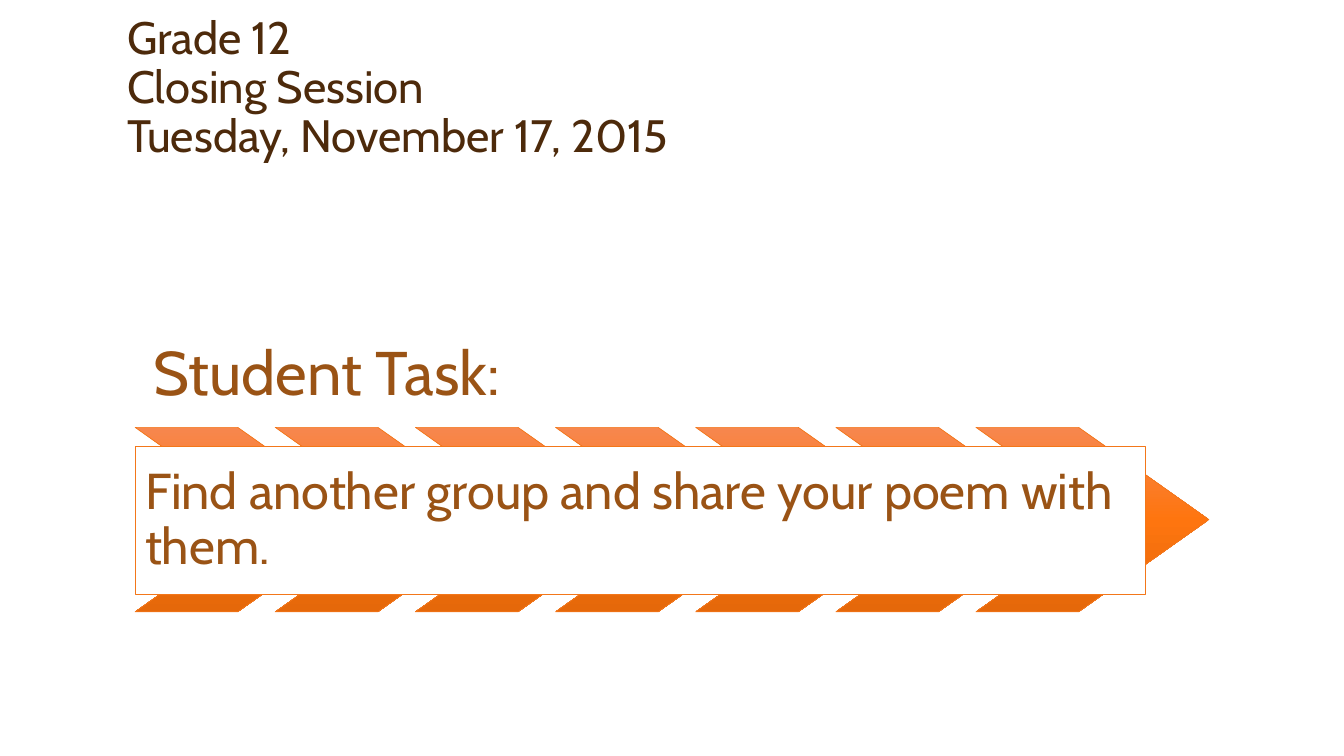
from copy import deepcopy

from pptx import Presentation
from pptx.dml.color import RGBColor
from pptx.enum.shapes import MSO_SHAPE
from pptx.enum.text import MSO_ANCHOR, MSO_AUTO_SIZE, PP_ALIGN
from pptx.util import Inches, Pt

CHEVRON, RECT = MSO_SHAPE.CHEVRON, MSO_SHAPE.RECTANGLE
BOTTOM, MIDDLE = MSO_ANCHOR.BOTTOM, MSO_ANCHOR.MIDDLE
LEFT, NO_FIT = PP_ALIGN.LEFT, MSO_AUTO_SIZE.NONE

FONT = "Cabin"
DARK, BROWN, ORANGE, WHITE = "4D2A0B", "9A5315", "F3771A", "FFFFFF"
SHADES = ["F7874E", "FE750F", "E5680A"]


def paint(target, color):
    target.rgb = RGBColor.from_string(color)


def write(shape, text, size, color, anchor, inset):
    frame = shape.text_frame
    frame.text = text
    frame.word_wrap = True
    frame.auto_size = NO_FIT
    frame.vertical_anchor = anchor
    frame.margin_left = frame.margin_right = Inches(inset[0])
    frame.margin_top = frame.margin_bottom = Inches(inset[1])
    para = frame.paragraphs[0]
    para.alignment = LEFT
    para.line_spacing = 0.9
    para.font.name = FONT
    para.font.size = Pt(size)
    paint(para.font.color, color)


def outline(shape):
    shape.shadow.inherit = False
    paint(shape.line.color, ORANGE)
    shape.line.width = Pt(0.5)


def shade(fill):
    fill.gradient()
    fill.gradient_angle = 270
    # Add a middle stop to the two default ones
    first = fill.gradient_stops[0]._gs
    first.addnext(deepcopy(first))
    for i, (stop, color) in enumerate(zip(fill.gradient_stops, SHADES)):
        stop.position = i / 2
        paint(stop.color, color)


def add_title(slide, x, y, w, h):
    title = slide.shapes.title
    title.left, title.top = Inches(x), Inches(y)
    title.width, title.height = Inches(w), Inches(h)
    write(title, "Grade 12\vClosing Session\vTuesday, November 17, 2015",
          32.4, DARK, BOTTOM, (0.1, 0.05))


def add_task(slide, x, y, w, h):
    shapes = slide.shapes
    # Heading
    head = shapes.add_textbox(Inches(x), Inches(y), Inches(w), Inches(0.9))
    write(head, "Student Task:", 44, BROWN, BOTTOM, (0.18, 0.18))

    # Row of seven chevrons
    top, tall = y + 0.9, h - 0.9
    for i in range(7):
        arrow = shapes.add_shape(CHEVRON, Inches(x + 1.39 * i), Inches(top),
                                 Inches(2.31), Inches(tall))
        arrow.adjustments[0] = 0.706
        shade(arrow.fill)
        outline(arrow)

    # Task panel across the row
    panel = shapes.add_shape(RECT, Inches(x), Inches(top + 0.19),
                             Inches(w + 0.13), Inches(1.47))
    panel.fill.solid()
    paint(panel.fill.fore_color, WHITE)
    outline(panel)
    write(panel, "Find another group and share your poem with them.",
          36, BROWN, MIDDLE, (0.1, 0.1))


def main():
    deck = Presentation()
    deck.slide_width, deck.slide_height = Inches(13.33), Inches(7.5)
    slide = deck.slides.add_slide(deck.slide_layouts[5])
    add_title(slide, 1.16, 0.33, 11, 1.33)
    add_task(slide, 1.34, 3.34, 9.89, 2.73)
    deck.save("out.pptx")


if __name__ == "__main__":
    main()
